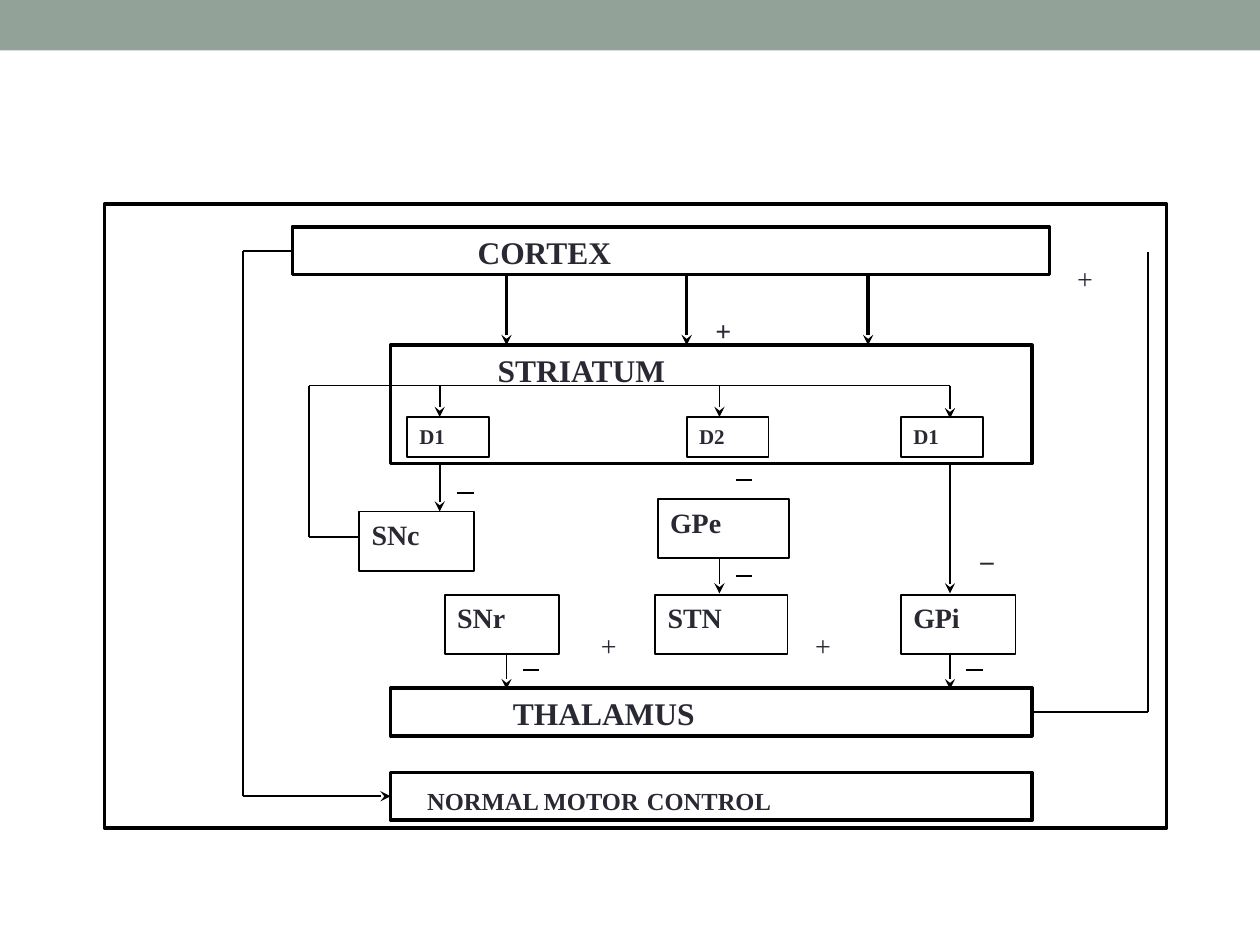
from dataclasses import dataclass

from lxml import etree
from pptx import Presentation
from pptx import util as u
from pptx.dml.color import RGBColor
from pptx.enum import shapes, text
from pptx.oxml.ns import qn


@dataclass
class Theme:
    band: RGBColor = RGBColor(0x93, 0xA2, 0x99)
    paper: RGBColor = RGBColor(0xFF, 0xFF, 0xFF)
    line: RGBColor = RGBColor(0, 0, 0)
    ink: RGBColor = RGBColor(0x29, 0x29, 0x34)
    serif: str = "Times New Roman"
    sans: str = "Arial"
    head: int = 18
    label: int = 16
    motor: int = 14
    small: int = 12
    thick: int = 2
    thin: int = 1


class Chart:
    """Draws boxes, signs and lines on one slide."""

    def __init__(self, slide, theme):
        self.slide, self.theme = slide, theme

    def rect(self, x, y, w, h, line=0, fill=None):
        box = self.slide.shapes.add_shape(
            shapes.MSO_SHAPE.RECTANGLE, *map(u.Inches, (x, y, w, h)))
        box.shadow.inherit = False
        box.fill.solid()
        box.fill.fore_color.rgb = fill or self.theme.paper
        if line:
            box.line.color.rgb = self.theme.line
            box.line.width = u.Pt(line)
        else:
            box.line.fill.background()
        return box

    def label(self, box, words, size, inset=0.1, bold=True, font=None, before=0):
        frame = box.text_frame
        frame.word_wrap = True
        frame.vertical_anchor = text.MSO_ANCHOR.TOP
        frame.margin_left = u.Inches(inset)
        para = frame.paragraphs[0]
        para.text = words
        para.alignment = text.PP_ALIGN.LEFT
        para.space_before = u.Pt(before)
        para.font.name = font or self.theme.serif
        para.font.size = u.Pt(size)
        para.font.bold = bold
        para.font.color.rgb = self.theme.ink
        return para

    def bar(self, words, x, y, w, h, inset):
        box = self.rect(x, y, w, h, self.theme.thick)
        self.label(box, words, self.theme.head, inset)
        return box

    def node(self, words, x, y, w, h, size, before=2):
        box = self.rect(x, y, w, h, self.theme.thin)
        self.label(box, words, size, before=before)

    def sign(self, words, x, y, w, h, bold=False, font=None):
        self.label(self.rect(x, y, w, h), words, self.theme.label,
                   bold=bold, font=font)

    def line(self, a, b, width=None, arrow=False):
        link = self.slide.shapes.add_connector(
            shapes.MSO_CONNECTOR.STRAIGHT, *map(u.Inches, (*a, *b)))
        link.line.color.rgb = self.theme.line
        link.line.width = u.Pt(width or self.theme.thin)
        props = link.element.spPr
        if arrow:
            etree.SubElement(props.find(qn("a:ln")), qn("a:tailEnd"),
                             type="stealth")
        etree.SubElement(props, qn("a:effectLst"))
        return link

    def route(self, *points, arrow=False):
        last = len(points) - 2
        return [self.line(a, b, arrow=arrow and i == last)
                for i, (a, b) in enumerate(zip(points, points[1:]))]


def main():
    deck = Presentation()
    deck.slide_width, deck.slide_height = u.Inches(10), u.Inches(7.5)
    theme = Theme()
    art = Chart(deck.slides.add_slide(deck.slide_layouts[6]), theme)

    # Top band and outer frame
    art.rect(0, 0, 10, 0.4, fill=theme.band)
    art.rect(0.83, 1.62, 8.43, 4.95, theme.thick)

    # Wide bars
    left, wide, high = 3.1, 5.09, 0.38
    cortex = art.bar("CORTEX", 2.32, 1.8, 6.01, high, 1.47)
    art.bar("STRIATUM", left, 2.74, wide, 0.94, 0.85)
    thal = art.bar("THALAMUS", left, 5.46, wide, high, 0.97)
    motor = art.rect(left, 6.13, wide, high, theme.thick)
    para = art.label(motor, "NORMAL MOTOR", theme.motor, 0.29, before=2)
    gap = para.add_run()
    gap.text = " "
    gap.font.size = u.Pt(theme.head)
    para.add_run().text = "CONTROL"

    # Nuclei
    for name, x, y, w, before in (
            ("SNc", 2.85, 4.06, 0.91, 2), ("GPe", 5.22, 3.96, 1.04, 2),
            ("SNr", 3.53, 4.72, 0.91, 2), ("STN", 5.2, 4.72, 1.05, 0),
            ("GPi", 7.15, 4.72, 0.91, 2)):
        art.node(name, x, y, w, 0.47, theme.label, before)

    # Receptors
    for name, x in (("D1", 3.23), ("D2", 5.45), ("D1", 7.15)):
        art.node(name, x, 3.31, 0.65, 0.32, theme.small)

    # Plus and minus signs
    art.sign("+", 5.58, 2.44, 0.52, 0.28, bold=True)
    art.sign("+", 8.45, 2.03, 0.52, 0.28)
    art.sign("+", 4.67, 4.94, 0.52, 0.38)
    art.sign("+", 6.37, 4.94, 0.65, 0.38)
    art.sign("−", 7.67, 4.28, 0.65, 0.38, font=theme.sans)
    for x, y in ((3.63, 3.91), (5.84, 3.81), (5.84, 4.57),
                 (7.67, 5.32), (4.15, 5.32)):
        art.line((x, y), (x + 0.13, y))

    # Downward arrows
    for x in (4.02, 5.45, 6.89):
        art.line((x, 2.18), (x, 2.74), theme.thick, arrow=True)
    for x, top, end in (
            (3.49, 3.06, 3.31), (5.71, 3.06, 3.31), (7.54, 3.06, 3.32),
            (3.49, 3.68, 4.06), (7.54, 3.68, 4.71), (5.71, 4.43, 4.71),
            (4.02, 5.18, 5.47), (7.54, 5.18, 5.47)):
        art.line((x, top), (x, end), arrow=True)

    # Loop from SNc back to the receptors
    art.route((2.84, 4.26), (2.45, 4.26), (2.45, 3.06), (7.54, 3.06))

    # Loop from cortex to motor control
    loop = art.route((2.32, 1.99), (1.93, 1.99), (1.93, 6.32), (left, 6.32),
                     arrow=True)
    loop[0].begin_connect(cortex, 1)
    loop[-1].end_connect(motor, 1)

    # Loop from thalamus up to cortex level
    back = art.route((left + wide, 5.65), (9.11, 5.65), (9.11, 2))
    back[0].begin_connect(thal, 3)

    deck.save("out.pptx")


if __name__ == "__main__":
    main()
